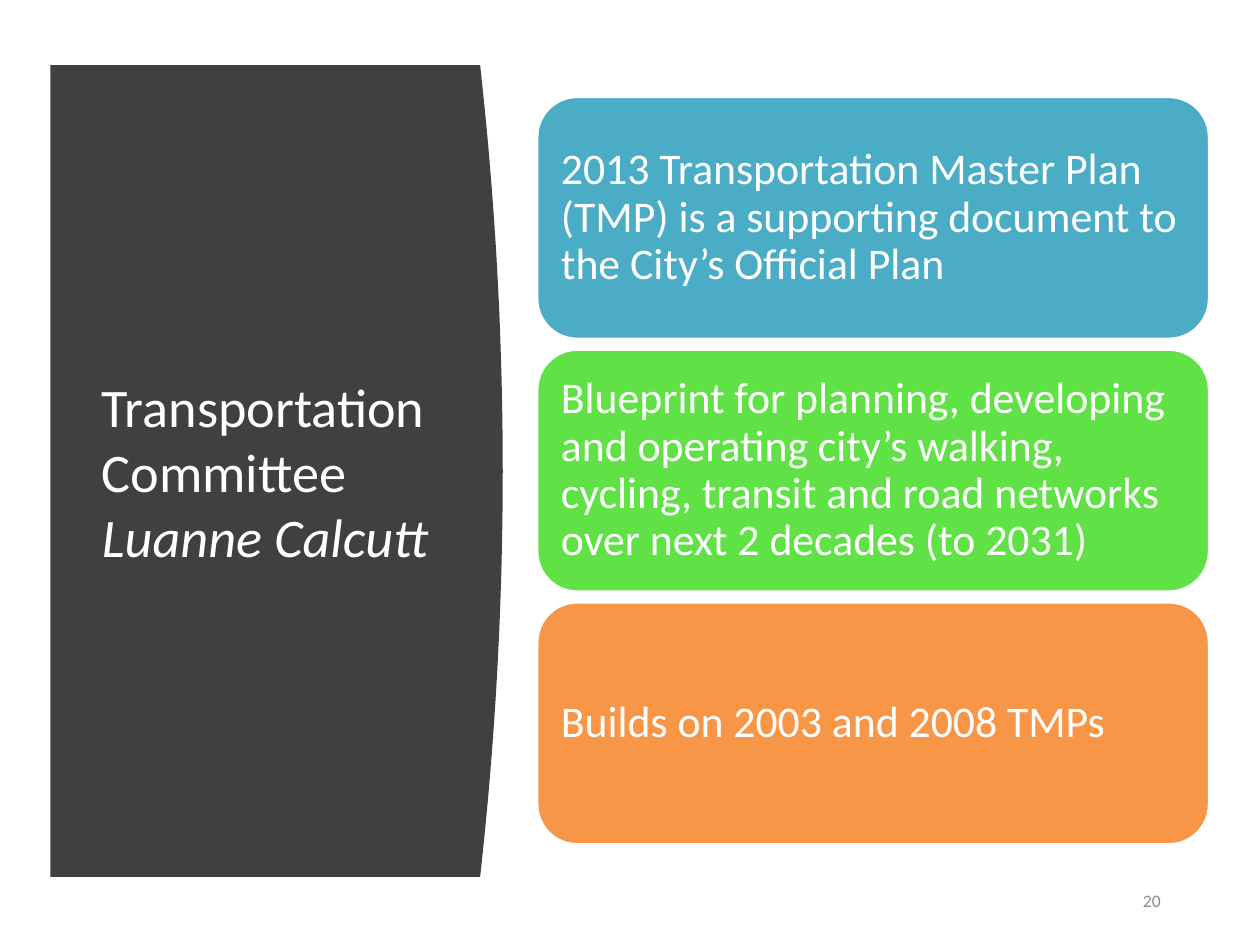
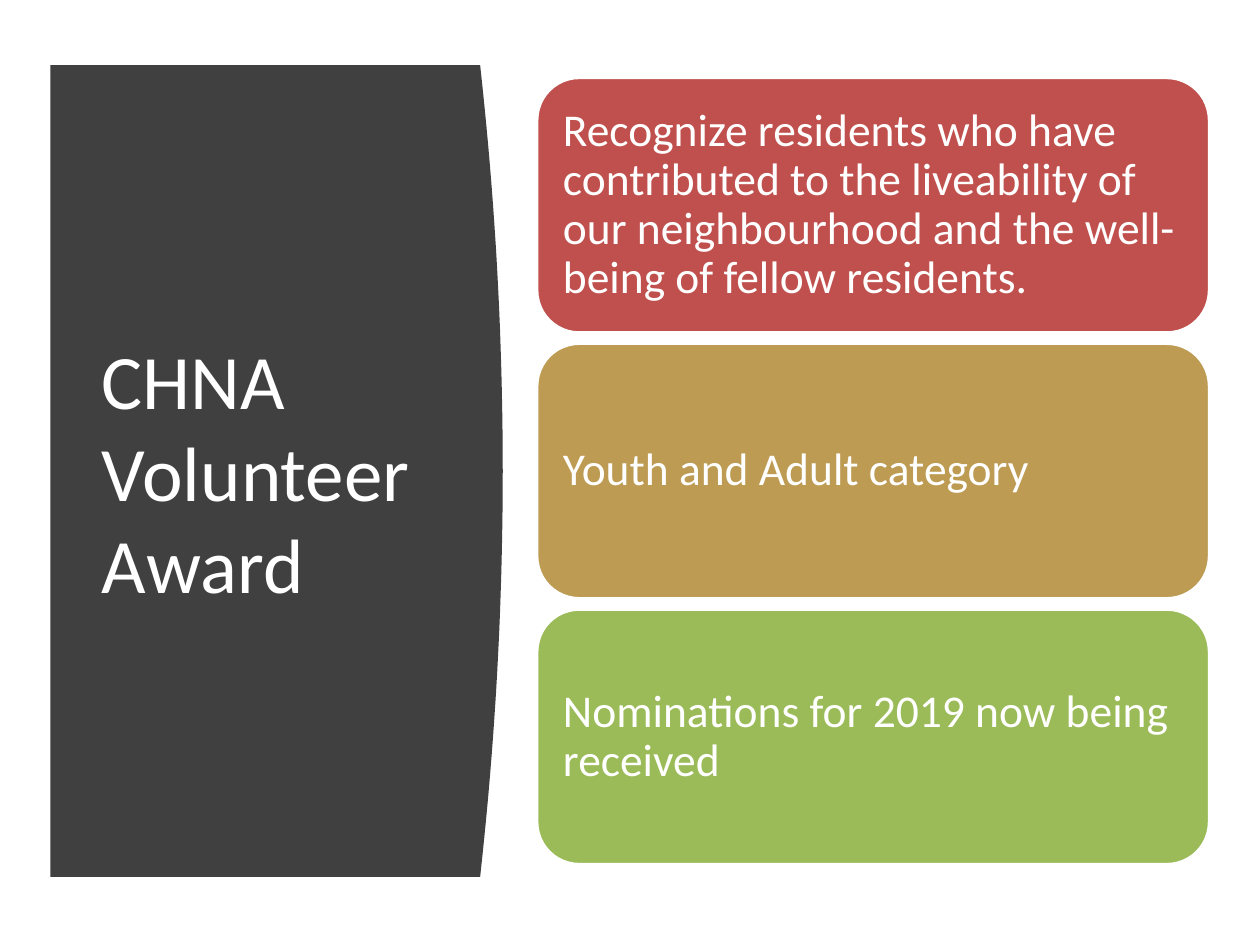
from dataclasses import dataclass

import pptx
import pptx.dml.color
import pptx.enum.shapes
import pptx.enum.text
import pptx.util

RGBColor = pptx.dml.color.RGBColor
Align = pptx.enum.text.PP_ALIGN
Pt = pptx.util.Pt

WHITE = RGBColor(0xFF, 0xFF, 0xFF)
CHARCOAL = RGBColor(0x40, 0x40, 0x40)
GREY = RGBColor(0x8C, 0x8C, 0x8C)
TEAL = RGBColor(0x4B, 0xAC, 0xC6)
BRIGHT_GREEN = RGBColor(0x60, 0xE1, 0x46)
ORANGE = RGBColor(0xF7, 0x96, 0x46)
RED = RGBColor(0xC0, 0x50, 0x4D)
GOLD = RGBColor(0xBD, 0x9B, 0x53)
OLIVE = RGBColor(0x9B, 0xBB, 0x59)

FONT = "Calibri"
SLIDE_WIDTH = pptx.util.Inches(10)
SLIDE_HEIGHT = pptx.util.Inches(7.5)
CURVE_STEPS = 40
CURVE_DEPTH = 0.05  # share of the panel's width
GAP_TO_CARD = 0.04


@dataclass
class Box:
    left: int
    top: int
    width: int
    height: int

    def share(self, left, top, width, height):
        """Return the box that covers the given shares of this one."""
        return Box(round(self.left + left * self.width),
                   round(self.top + top * self.height),
                   round(width * self.width), round(height * self.height))

    def place(self, shape):
        shape.left, shape.top = self.left, self.top
        shape.width, shape.height = self.width, self.height

    @property
    def bounds(self):
        return self.left, self.top, self.width, self.height


PAGE = Box(0, 0, SLIDE_WIDTH, SLIDE_HEIGHT)
PANEL = PAGE.share(0.04, 0.069, 0.359, 0.859)
PAGE_NUMBER = PAGE.share(0.88, 0.927, 0.051, 0.053)


def style_paragraph(paragraph, size, color=WHITE, align=Align.LEFT):
    paragraph.alignment = align
    paragraph.font.name = FONT
    paragraph.font.size = Pt(size)
    paragraph.font.color.rgb = color


def center_vertically(frame):
    frame.word_wrap = True
    frame.auto_size = pptx.enum.text.MSO_AUTO_SIZE.NONE
    frame.vertical_anchor = pptx.enum.text.MSO_ANCHOR.MIDDLE


def add_title_panel(slide, box, title, size, speaker=None):
    """Put the title on a dark panel whose right edge bulges outwards."""
    right = box.left + box.width
    edge = []
    for step in range(CURVE_STEPS + 1):
        progress = step / CURVE_STEPS
        inset = CURVE_DEPTH * (2 * progress - 1) ** 2
        edge.append((round(right - inset * box.width),
                     round(box.top + progress * box.height)))
    outline = slide.shapes.build_freeform(box.left, box.top)
    outline.add_line_segments(edge + [(box.left, box.top + box.height)])
    panel = outline.convert_to_shape()
    panel.shadow.inherit = False
    panel.fill.solid()
    panel.fill.fore_color.rgb = CHARCOAL
    panel.line.fill.background()

    heading = slide.shapes.title
    heading.element.addprevious(panel.element)
    box.share(0.086, 0.092, 0.78, 0.815).place(heading)
    center_vertically(heading.text_frame)
    paragraph = heading.text_frame.paragraphs[0]
    style_paragraph(paragraph, size)
    paragraph.add_run().text = title
    if speaker:
        paragraph.add_line_break()
        name = paragraph.add_run()
        name.text = speaker
        name.font.italic = True


def add_cards(slide, box, cards, size, inset):
    """Stack equal rounded cards, with equal gaps, to fill the box."""
    card_share = 1 / (len(cards) + (len(cards) - 1) * GAP_TO_CARD)
    for row, (message, color) in enumerate(cards):
        top = row * card_share * (1 + GAP_TO_CARD)
        card = slide.shapes.add_shape(
            pptx.enum.shapes.MSO_SHAPE.ROUNDED_RECTANGLE,
            *box.share(0, top, 1, card_share).bounds)
        card.shadow.inherit = False
        card.fill.solid()
        card.fill.fore_color.rgb = color
        card.line.color.rgb = WHITE
        card.line.width = Pt(2)

        frame = card.text_frame
        center_vertically(frame)
        frame.margin_left = frame.margin_right = pptx.util.Inches(inset)
        frame.margin_top = frame.margin_bottom = pptx.util.Inches(inset)
        paragraph = frame.paragraphs[0]
        paragraph.text = message
        paragraph.line_spacing = 0.9
        style_paragraph(paragraph, size)


def add_page_number(slide, box, number):
    frame = slide.shapes.add_textbox(*box.bounds).text_frame
    center_vertically(frame)
    paragraph = frame.paragraphs[0]
    paragraph.text = str(number)
    style_paragraph(paragraph, 10, GREY, Align.RIGHT)


def add_topic_slide(deck):
    title_only = deck.slide_layouts.get_by_name("Title Only")
    return deck.slides.add_slide(title_only)


def add_transportation_slide(deck):
    slide = add_topic_slide(deck)
    add_title_panel(slide, PANEL, "Transportation Committee", 31,
                    speaker="Luanne Calcutt")
    add_cards(slide, PAGE.share(0.426, 0.102, 0.534, 0.792), [
        ("2013 Transportation Master Plan (TMP) is a supporting document "
         "to the City’s Official Plan", TEAL),
        ("Blueprint for planning, developing and operating city’s walking, "
         "cycling, transit and road networks over next 2 decades (to 2031)",
         BRIGHT_GREEN),
        ("Builds on 2003 and 2008 TMPs", ORANGE),
    ], size=25, inset=0.1)
    add_page_number(slide, PAGE_NUMBER, 20)


def add_award_slide(deck):
    slide = add_topic_slide(deck)
    add_title_panel(slide, PANEL, "CHNA Volunteer Award", 44)
    add_cards(slide, PAGE.share(0.426, 0.082, 0.534, 0.833), [
        ("Recognize residents who have contributed to the liveability of our "
         "neighbourhood and the well-being of fellow residents.", RED),
        ("Youth and Adult category", GOLD),
        ("Nominations for 2019 now being received", OLIVE),
    ], size=26, inset=0.11)


def main():
    deck = pptx.Presentation()
    deck.slide_width, deck.slide_height = SLIDE_WIDTH, SLIDE_HEIGHT
    add_transportation_slide(deck)
    add_award_slide(deck)
    deck.save("out.pptx")


if __name__ == "__main__":
    main()
